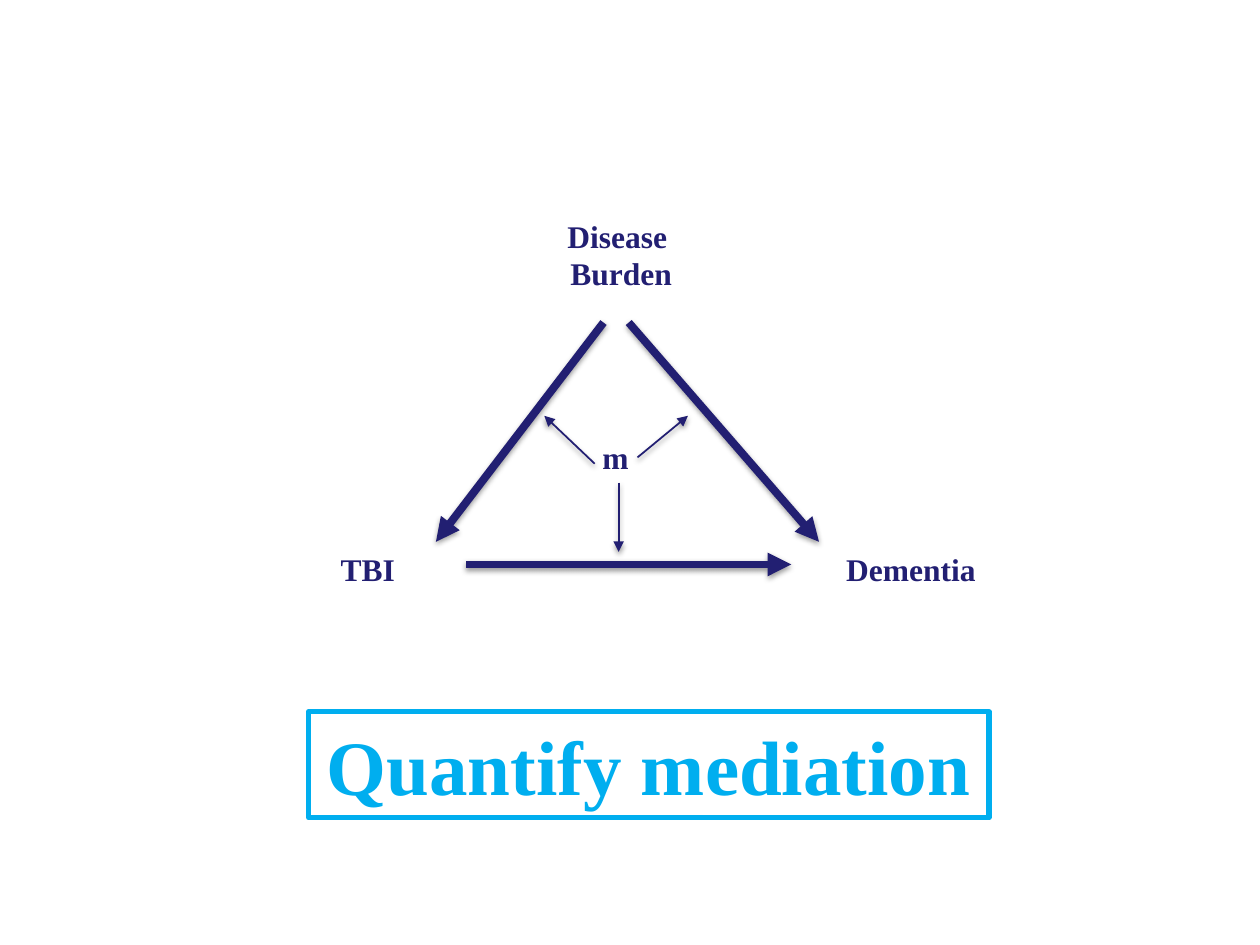
from lxml import etree
from pptx import Presentation
from pptx.dml.color import RGBColor
from pptx.enum.shapes import MSO_CONNECTOR, MSO_SHAPE
from pptx.enum.text import MSO_ANCHOR, MSO_AUTO_SIZE, PP_ALIGN
from pptx.oxml.ns import qn
from pptx.util import Inches, Pt

LINE = MSO_CONNECTOR.STRAIGHT
RECT = MSO_SHAPE.RECTANGLE
MIDDLE = MSO_ANCHOR.MIDDLE
GROW = MSO_AUTO_SIZE.SHAPE_TO_FIT_TEXT
CENTER = PP_ALIGN.CENTER

NAVY = RGBColor(0x22, 0x1F, 0x72)
CYAN = RGBColor(0x00, 0xAE, 0xEF)
FONT = "Times New Roman"
WIDE, HIGH = Inches(10), Inches(7.5)
COLS, ROWS = 100, 75
THICK, THIN = 4.5, 1

LABELS = [
    (("Disease ", "Burden"), (44, 16.7, 10.6, 7.1), False),
    (("Dementia",), (66.1, 43.2, 12.4, 4), False),
    (("TBI",), (26, 43.2, 6.4, 4), False),
    (("m",), (46.8, 34.3, 4.1, 4), True),
]
ARROWS = [
    ((49.9, 25.6), (65, 43), THICK),
    ((47.9, 25.6), (34.6, 43), THICK),
    ((37, 44.8), (62.8, 44.8), THICK),
    ((49.1, 38.3), (49.1, 43.8), THIN),
    ((50.6, 36.3), (54.6, 33), THIN),
    ((47.2, 36.8), (43.2, 33), THIN),
]


def place(col, row):
    """Turn a grid column and row into slide lengths."""
    return round(WIDE * col / COLS), round(HIGH * row / ROWS)


def write(frame, lines, size, color, wrap):
    """Fill a text frame with centred bold lines."""
    frame.word_wrap = wrap
    frame.auto_size = GROW
    for num, line in enumerate(lines):
        para = frame.add_paragraph() if num else frame.paragraphs[0]
        para.alignment = CENTER
        run = para.add_run()
        run.text = line
        run.font.name = FONT
        run.font.size = Pt(size)
        run.font.bold = True
        run.font.color.rgb = color


def add_label(slide, lines, area, wrap):
    """Add a node label to the diagram."""
    box = slide.shapes.add_textbox(*place(*area[:2]), *place(*area[2:]))
    write(box.text_frame, lines, 18, NAVY, wrap)


def add_shade(props):
    """Give a connector a soft shadow straight below it."""
    effects = etree.SubElement(props, qn("a:effectLst"))
    shade = etree.SubElement(
        effects, qn("a:outerShdw"), blurRad=str(Pt(3.1)), dist=str(Pt(1.6)),
        dir="5400000", rotWithShape="0")
    color = etree.SubElement(shade, qn("a:srgbClr"), val="000000")
    etree.SubElement(color, qn("a:alpha"), val="38000")


def add_arrow(slide, start, end, width):
    """Add a navy arrow that points at its end."""
    arrow = slide.shapes.add_connector(LINE, *place(*start), *place(*end))
    arrow.line.color.rgb = NAVY
    arrow.line.width = Pt(width)
    stroke = arrow.line._get_or_add_ln()
    etree.SubElement(stroke, qn("a:tailEnd"), type="triangle")
    add_shade(arrow._element.spPr)


def add_banner(slide, text, area):
    """Add the outlined box with the main message."""
    box = slide.shapes.add_shape(
        RECT, *place(*area[:2]), *place(*area[2:]))
    box.shadow.inherit = False
    box.fill.background()
    box.line.color.rgb = CYAN
    box.line.width = Pt(3)
    box.text_frame.vertical_anchor = MIDDLE
    write(box.text_frame, (text,), 44, CYAN, True)


def main():
    """Build the mediation slide and save it."""
    deck = Presentation()
    deck.slide_width, deck.slide_height = WIDE, HIGH
    slide = deck.slides.add_slide(deck.slide_layouts[6])
    for arrow in ARROWS:
        add_arrow(slide, *arrow)
    for label in LABELS:
        add_label(slide, *label)
    add_banner(slide, "Quantify mediation", (24.5, 56.5, 54, 8.4))
    deck.save("out.pptx")


if __name__ == "__main__":
    main()
